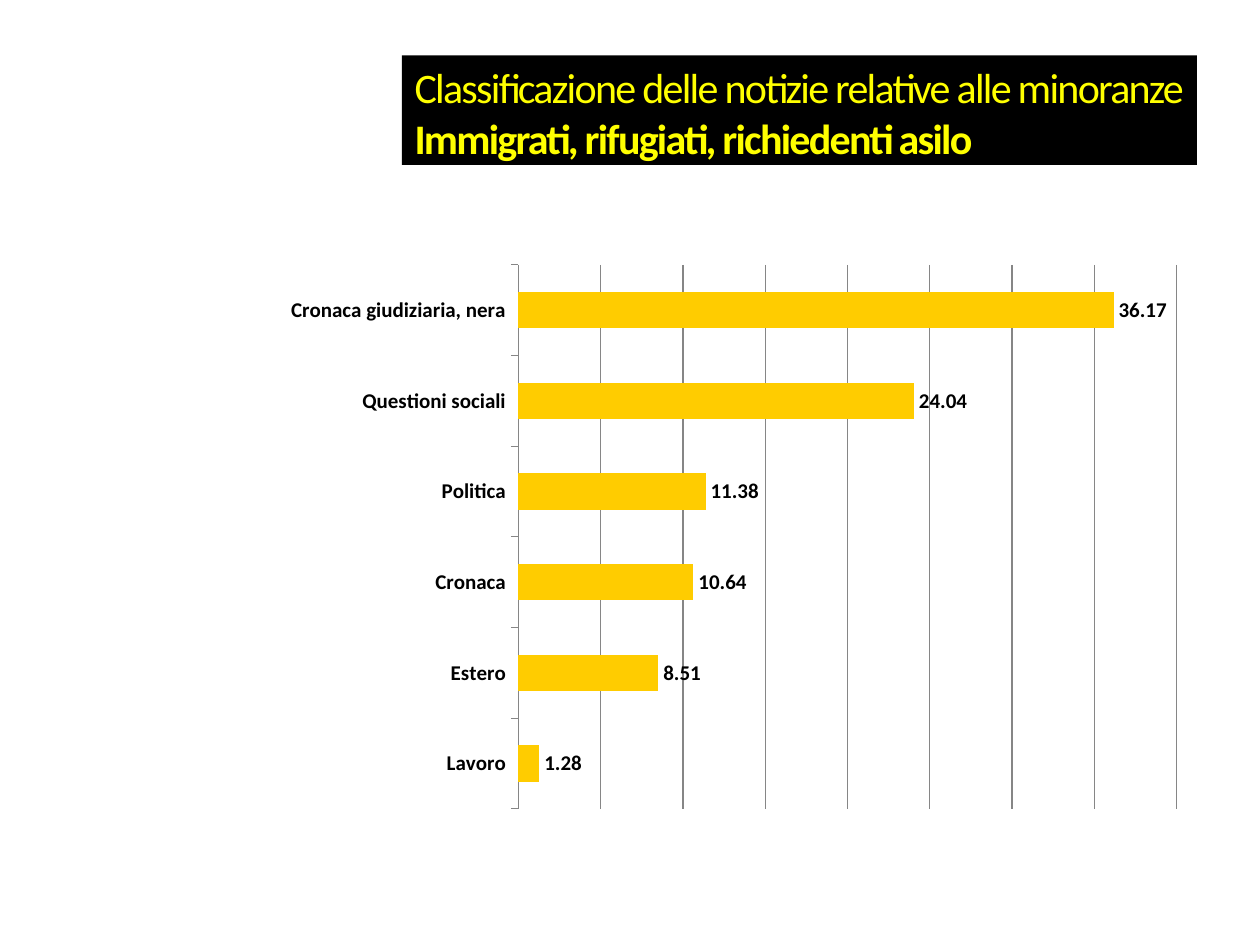
from lxml import etree
from pptx import Presentation
from pptx.chart.data import CategoryChartData
from pptx.dml.color import RGBColor
from pptx.enum.chart import XL_CHART_TYPE, XL_LABEL_POSITION, XL_TICK_MARK
from pptx.enum.text import MSO_ANCHOR, MSO_AUTO_SIZE, PP_ALIGN
from pptx.oxml.ns import qn
from pptx.util import Pt

BAR_CLUSTERED = XL_CHART_TYPE.BAR_CLUSTERED
OUTSIDE_END = XL_LABEL_POSITION.OUTSIDE_END
TICK_OUTSIDE = XL_TICK_MARK.OUTSIDE
TICK_NONE = XL_TICK_MARK.NONE
TOP = MSO_ANCHOR.TOP
NO_AUTOFIT = MSO_AUTO_SIZE.NONE
LEFT = PP_ALIGN.LEFT

BLACK = RGBColor(0x00, 0x00, 0x00)
YELLOW = RGBColor(0xFF, 0xFF, 0x00)
AMBER = RGBColor(0xFF, 0xCC, 0x00)
GRAY = RGBColor(0x86, 0x86, 0x86)
FONT = "Calibri"

# Content
HEADING = [
    ("Classificazione delle notizie relative alle minoranze", False),
    ("Immigrati, rifugiati, richiedenti asilo", True),
]
NEWS_SHARES = [
    ("Cronaca giudiziaria, nera", 36.17),
    ("Questioni sociali", 24.04),
    ("Politica", 11.38),
    ("Cronaca", 10.64),
    ("Estero", 8.51),
    ("Lavoro", 1.28),
]

# Left, top, width, height in points
HEADING_BOX = (229.7, 31.7, 454.3, 62.6)
CHART_BOX = (156.2, 145.4, 527, 323.3)
PLOT_BOX = (296.2, 151.4, 376.3, 310.9)


def format_font(font, size, color, bold=False):
    font.name = FONT
    font.size = Pt(size)
    font.bold = bold
    font.color.rgb = color


def place_plot(chart):
    """Fix the inner plot area as fractions of the chart frame."""
    left, top, width, height = CHART_BOX
    x, y, w, h = PLOT_BOX
    settings = [
        ("layoutTarget", "inner"), ("xMode", "edge"), ("yMode", "edge"),
        ("x", (x - left) / width), ("y", (y - top) / height),
        ("w", w / width), ("h", h / height),
    ]
    plot_area = chart.element.find(".//" + qn("c:plotArea"))
    layout = plot_area.find(qn("c:layout"))
    if layout is None:
        layout = etree.Element(qn("c:layout"))
        plot_area.insert(0, layout)
    manual = etree.SubElement(layout, qn("c:manualLayout"))
    for tag, value in settings:
        text = value if isinstance(value, str) else f"{value:.4f}"
        etree.SubElement(manual, qn(f"c:{tag}")).set("val", text)


prs = Presentation()
prs.slide_width, prs.slide_height = Pt(720), Pt(540)
slide = prs.slides.add_slide(prs.slide_layouts[5])

# Heading
heading = slide.shapes.title
heading.left, heading.top, heading.width, heading.height = map(Pt, HEADING_BOX)
heading.fill.solid()
heading.fill.fore_color.rgb = BLACK
frame = heading.text_frame
frame.auto_size = NO_AUTOFIT
frame.word_wrap = False
frame.vertical_anchor = TOP
paragraph = frame.paragraphs[0]
paragraph.alignment = LEFT
for index, (line, bold) in enumerate(HEADING):
    if index:
        paragraph.add_line_break()
    run = paragraph.add_run()
    run.text = line
    format_font(run.font, 24, YELLOW, bold)
    run.font._element.set("spc", "-100")

# Bar chart
data = CategoryChartData(number_format="0.00")
data.categories = [category for category, _ in NEWS_SHARES]
data.add_series("Series 1", [share for _, share in NEWS_SHARES])
chart = slide.shapes.add_chart(BAR_CLUSTERED, *map(Pt, CHART_BOX), data).chart
chart.has_legend = False
chart.has_title = False
format_font(chart.font, 10, BLACK)
place_plot(chart)

# Bars and their values
plot = chart.plots[0]
plot.vary_by_categories = False
plot.gap_width = 150
bars = plot.series[0]
bars.format.fill.solid()
bars.format.fill.fore_color.rgb = AMBER
labels = bars.data_labels
labels.show_value = True
labels.number_format = "0.00"
labels.number_format_is_linked = False
labels.position = OUTSIDE_END
format_font(labels.font, 12, BLACK, True)

# Axes
categories = chart.category_axis
categories.reverse_order = True
categories.major_tick_mark = TICK_OUTSIDE
categories.minor_tick_mark = TICK_NONE
categories.format.line.color.rgb = GRAY
format_font(categories.tick_labels.font, 12, BLACK, True)

shares = chart.value_axis
shares.minimum_scale, shares.maximum_scale, shares.major_unit = 0, 40, 5
shares.tick_labels.number_format = "0.00"
shares.tick_labels.number_format_is_linked = False
shares.has_major_gridlines = True
shares.major_gridlines.format.line.color.rgb = GRAY
shares.visible = False

prs.save("out.pptx")
